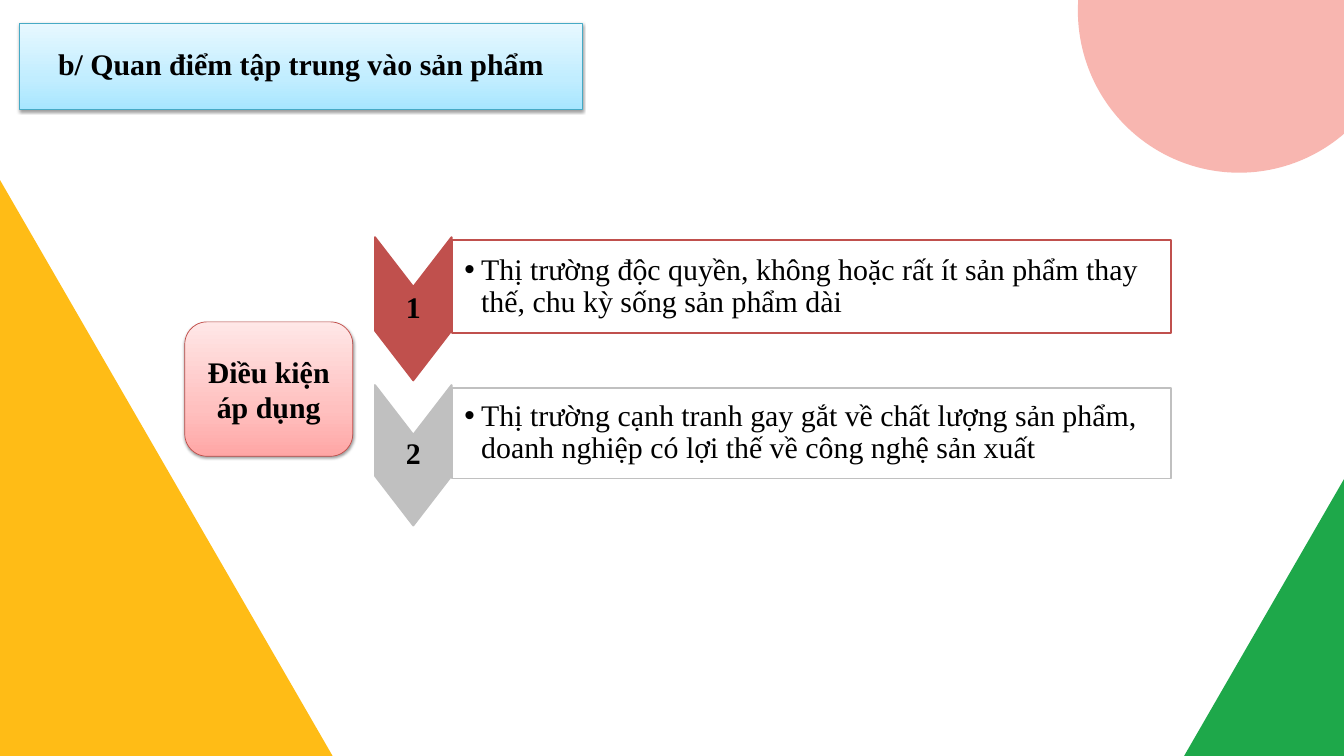
import copy

import lxml.etree
import pptx
import pptx.dml.color
import pptx.enum.shapes
import pptx.enum.text
import pptx.oxml
import pptx.oxml.ns
import pptx.util

PX = 9144
FONT = "Times New Roman"
COLORS = {
    "yellow": "FFBC16", "green": "1EA84A", "pink": "F8B6B0",
    "black": "000000", "white": "FFFFFF",
    "blue line": "46AAC5", "red line": "BF4C48",
    "red": "C0504D", "gray": "C0C0C0",
}
GRADIENTS = {
    "blue": ["A7E6FF", "C1EDFF", "E7F8FF"],
    "red": ["FFA6A5", "FFC0BF", "FFE7E7"],
}
CONDITIONS = [
    ("1", "Thị trường độc quyền, không hoặc rất ít sản phẩm thay thế, chu kỳ sống sản phẩm dài",
     "red", 213, 139),
    ("2", "Thị trường cạnh tranh gay gắt về chất lượng sản phẩm, doanh nghiệp có lợi thế về công nghệ sản xuất",
     "gray", 209, 135),
]
CONDITION_TOP, CONDITION_PITCH = 353, 220
CHEVRON_LEFT, CHEVRON_WIDTH, NOTCH = 558, 114, 74
BAR_WIDTH = 1071
SHAPES = pptx.enum.shapes.MSO_SHAPE
ALIGN = pptx.enum.text.PP_ALIGN


def rgb(value):
    """Turn a hex string into a colour."""
    return pptx.dml.color.RGBColor.from_string(value)


def add_child(parent, tag, **attributes):
    """Append a DrawingML element to a parent."""
    return lxml.etree.SubElement(parent, pptx.oxml.ns.qn(tag), attributes)


def place(shape, left, top, width, height):
    """Move and size a shape in px."""
    shape.left, shape.top = left * PX, top * PX
    shape.width, shape.height = width * PX, height * PX


def set_geometry(shape, xml):
    """Give a placeholder its own outline."""
    namespace = pptx.oxml.ns.nsdecls("a")
    shape.element.spPr.insert(1, pptx.oxml.parse_xml(xml.replace(">", f" {namespace}>", 1)))


def style(shape, fill, line=None, width=0):
    """Set a flat fill and an optional line."""
    shape.shadow.inherit = False
    shape.fill.solid()
    shape.fill.fore_color.rgb = rgb(COLORS[fill])
    if line:
        shape.line.color.rgb = rgb(COLORS[line])
        shape.line.width = pptx.util.Pt(width)
    else:
        shape.line.fill.background()


def style_card(shape, gradient, line):
    """Set an upward gradient, a thin line and a soft shadow."""
    style(shape, "white", line, 0.75)
    shape.fill.gradient()
    shape.fill.gradient_angle = 90
    stop_list = shape.element.spPr.find(".//" + pptx.oxml.ns.qn("a:gsLst"))
    stop_list.append(copy.deepcopy(stop_list[0]))
    for stop, color, position in zip(shape.fill.gradient_stops, GRADIENTS[gradient], (0, 0.35, 1)):
        stop.color.rgb = rgb(color)
        stop.position = position
    effects = shape.element.spPr.find(pptx.oxml.ns.qn("a:effectLst"))
    shadow = add_child(effects, "a:outerShdw", blurRad=str(pptx.util.Pt(3.1)),
                       dist=str(pptx.util.Pt(1.6)), dir="5400000", rotWithShape="0")
    color = add_child(shadow, "a:srgbClr", val=COLORS["black"])
    add_child(color, "a:alpha", val="38000")


def write(shape, text, margins, align=ALIGN.CENTER, bold=True, spacing=0.9, after=0, bullet=False):
    """Write one paragraph, centred vertically, with margins in px."""
    frame = shape.text_frame
    frame.word_wrap = True
    frame.auto_size = pptx.enum.text.MSO_AUTO_SIZE.NONE
    frame.vertical_anchor = pptx.enum.text.MSO_ANCHOR.MIDDLE
    frame.margin_left, frame.margin_top, frame.margin_right, frame.margin_bottom = (
        margin * PX for margin in margins)
    paragraph = frame.paragraphs[0]
    paragraph.alignment = align
    paragraph.line_spacing = spacing
    paragraph.space_before = pptx.util.Pt(0)
    paragraph.space_after = pptx.util.Pt(after)
    if bullet:
        properties = paragraph._p.get_or_add_pPr()
        properties.set("marL", str(25 * PX))
        properties.set("indent", str(-25 * PX))
        add_child(properties, "a:buChar", char="•")
    run = paragraph.add_run()
    run.text = text
    run.font.name = FONT
    run.font.size = pptx.util.Pt(32)
    run.font.bold = bold
    run.font.color.rgb = rgb(COLORS["black"])


def add_decoration(slide, kind, fill, *box):
    """Add a plain background shape."""
    shape = slide.shapes.add_shape(kind, 0, 0, PX, PX)
    place(shape, *box)
    style(shape, fill)


def add_title(slide, text):
    """Turn the title placeholder into a rounded card."""
    title = slide.shapes.title
    place(title, 29, 34, 838, 129)
    set_geometry(title, '<a:prstGeom prst="roundRect"><a:avLst/></a:prstGeom>')
    style_card(title, "blue", "blue line")
    write(title, text, (9, 9, 9, 9), after=7.5)


def add_label(slide, text):
    """Add the rounded card that names the list."""
    label = slide.shapes.add_shape(SHAPES.ROUNDED_RECTANGLE, 0, 0, PX, PX)
    place(label, 275, 479, 250, 200)
    style_card(label, "red", "red line")
    write(label, text, (10, 5, 10, 5), spacing=1)


def add_chevron(slide, number, color, top, height):
    """Add a numbered chevron that points down."""
    left, right = CHEVRON_LEFT, CHEVRON_LEFT + CHEVRON_WIDTH
    middle, bottom = left + CHEVRON_WIDTH // 2, top + height
    builder = slide.shapes.build_freeform(right, top, scale=PX)
    builder.add_line_segments([
        (right, bottom - NOTCH), (middle, bottom), (left, bottom - NOTCH),
        (left, top), (middle, top + NOTCH)])
    chevron = builder.convert_to_shape()
    style(chevron, color, color, 2)
    write(chevron, number, (2, 58, 2, 58))


def add_bar(slide, bar, text, color, top, height):
    """Turn a body placeholder into a bar with round right corners."""
    slide.shapes.element.append(bar.element)
    place(bar, CHEVRON_LEFT + CHEVRON_WIDTH, top, BAR_WIDTH, height)
    straight, radius_x, radius_y = BAR_WIDTH - 29, 29, 23
    arc = f'<a:arcTo wR="{radius_x}" hR="{radius_y}" stAng="%d" swAng="5400000"/>'
    set_geometry(bar, (
        '<a:custGeom><a:avLst/><a:gdLst/><a:ahLst/><a:cxnLst/>'
        '<a:rect l="0" t="0" r="r" b="b"/><a:pathLst>'
        f'<a:path w="{BAR_WIDTH}" h="{height}"><a:moveTo><a:pt x="0" y="0"/></a:moveTo>'
        f'<a:lnTo><a:pt x="{straight}" y="0"/></a:lnTo>{arc % 16200000}'
        f'<a:lnTo><a:pt x="{BAR_WIDTH}" y="{height - radius_y}"/></a:lnTo>{arc % 0}'
        f'<a:lnTo><a:pt x="0" y="{height}"/></a:lnTo><a:close/></a:path></a:pathLst></a:custGeom>'))
    style(bar, "white", color, 2)
    fill_color = bar.element.spPr.find(pptx.oxml.ns.qn("a:solidFill"))[0]
    add_child(fill_color, "a:alpha", val="90000")
    write(bar, text, (19, 7, 7, 7), align=ALIGN.LEFT, bold=False, bullet=True)


def main():
    """Build the slide and save it."""
    presentation = pptx.Presentation()
    presentation.slide_width, presentation.slide_height = 2000 * PX, 1125 * PX
    slide = presentation.slides.add_slide(presentation.slide_layouts.get_by_name("Two Content"))
    add_decoration(slide, SHAPES.ISOSCELES_TRIANGLE, "yellow", -496, 267, 991, 858)
    add_decoration(slide, SHAPES.ISOSCELES_TRIANGLE, "green", 1743, 713, 514, 445)
    add_decoration(slide, SHAPES.OVAL, "pink", 1604, -225, 480, 482)
    add_title(slide, "b/ Quan điểm tập trung vào sản phẩm")
    add_label(slide, "Điều kiện áp dụng")
    bars = [slide.placeholders[1], slide.placeholders[2]]
    for index, (number, text, color, chevron_height, bar_height) in enumerate(CONDITIONS):
        top = CONDITION_TOP + index * CONDITION_PITCH
        add_chevron(slide, number, color, top, chevron_height)
        add_bar(slide, bars[index], text, color, top + 4, bar_height)
    presentation.save("out.pptx")


if __name__ == "__main__":
    main()
